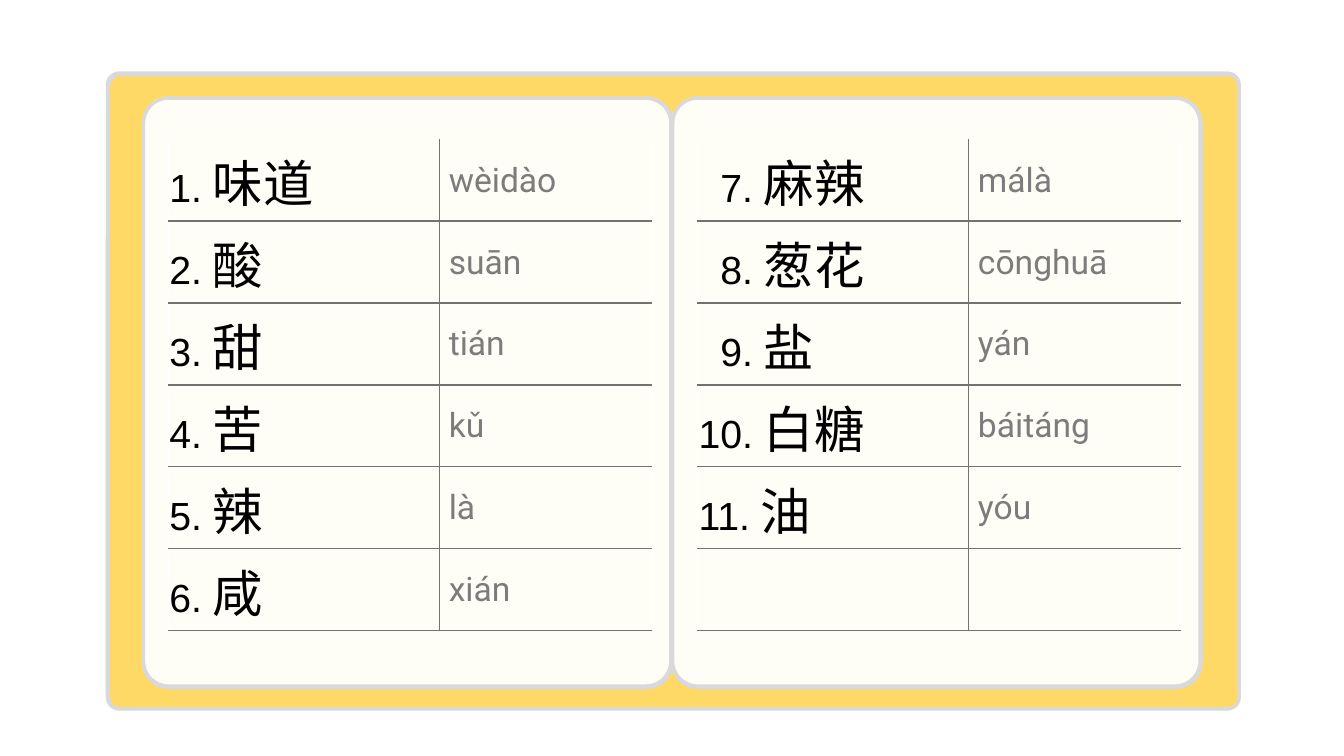
from dataclasses import dataclass
from lxml import etree
from pptx import Presentation
from pptx.dml.color import RGBColor
from pptx.enum import shapes, text
from pptx.oxml import ns
from pptx.util import Pt


@dataclass(frozen=True)
class Theme:
    cover: str = "FFD966"
    page: str = "FFFEF6"
    edge: str = "D9D9D9"
    rule: str = "767171"
    blank: str = "FFFFFF"
    ink: str = "000000"
    pinyin: str = "7C7C7C"
    number_size: float = 28
    word_size: float = 36
    pinyin_size: float = 24
    number_font: str = "Arial"
    word_font: str = "Noto Sans CJK SC"
    pinyin_font: str = "Roboto"


theme = Theme()
ROWS = 6
PAGE_STEP = 378
COLUMN_WIDTHS = (193.68, 151.2)
ROW_HEIGHT = 58.56
CELL_INSET = 0.72
DIGIT_INDENT = 15.56
PINYIN_INDENT = 5.95

pages = [
    [("1", "味道", "wèidào"), ("2", "酸", "suān"), ("3", "甜", "tián"),
     ("4", "苦", "kǔ"), ("5", "辣", "là"), ("6", "咸", "xián")],
    [("7", "麻辣", "málà"), ("8", "葱花", "cōnɡhuā"), ("9", "盐", "yán"),
     ("10", "白糖", "báitánɡ"), ("11", "油", "yóu")],
]


def add_run(paragraph, content, size, font_name, color):
    run = paragraph.add_run()
    run.text = content
    for name, value in {"size": Pt(size), "name": font_name, "bold": False}.items():
        setattr(run.font, name, value)
    run.font.color.rgb = RGBColor.from_string(color)
    east_asian = etree.SubElement(run.font._element, ns.qn("a:ea"))
    east_asian.set("typeface", font_name)


def add_border(cell, side, color):
    line = etree.SubElement(cell._tc.get_or_add_tcPr(), ns.qn(f"a:ln{side}"), w=str(Pt(1)))
    fill = etree.SubElement(line, ns.qn("a:solidFill"))
    etree.SubElement(fill, ns.qn("a:srgbClr"), val=color)


presentation = Presentation()
presentation.slide_width = Pt(960)
presentation.slide_height = Pt(540)
slide = presentation.slides.add_slide(presentation.slide_layouts[6])

panels = [(77.04, 52.56, 807.84, 453.6, 0.018, theme.cover)]
panels += [(102.24 + PAGE_STEP * index, 69.84, 377.28, 420.48, 0.048, theme.page)
           for index in range(len(pages))]
for left, top, width, height, rounding, color in panels:
    shape = slide.shapes.add_shape(
        shapes.MSO_SHAPE.ROUNDED_RECTANGLE, Pt(left), Pt(top), Pt(width), Pt(height))
    shape.adjustments[0] = rounding
    shape.shadow.inherit = False
    shape.fill.solid()
    shape.fill.fore_color.rgb = RGBColor.from_string(color)
    shape.line.color.rgb = RGBColor.from_string(theme.edge)
    shape.line.width = Pt(3)

for index, entries in enumerate(pages):
    table = slide.shapes.add_table(
        ROWS, 2, Pt(120.24 + PAGE_STEP * index), Pt(99.36),
        Pt(sum(COLUMN_WIDTHS)), Pt(ROW_HEIGHT * ROWS)).table
    for name, value in {"first_row": False, "horz_banding": False}.items():
        setattr(table, name, value)
    for column, width in zip(table.columns, COLUMN_WIDTHS):
        column.width = Pt(width)
    for row_index, row in enumerate(table.rows):
        row.height = Pt(ROW_HEIGHT)
        word_cell, pinyin_cell = row.cells
        top_color = theme.rule if row_index else theme.blank
        for cell, left_color, right_color in (
                (word_cell, theme.blank, theme.rule),
                (pinyin_cell, theme.rule, theme.blank)):
            cell_format = {
                "margin_left": Pt(CELL_INSET), "margin_right": Pt(CELL_INSET),
                "margin_top": Pt(CELL_INSET), "margin_bottom": Pt(0),
                "vertical_anchor": text.MSO_ANCHOR.MIDDLE,
            }
            for name, value in cell_format.items():
                setattr(cell, name, value)
            for side, color in zip("LRTB", (left_color, right_color, top_color, theme.rule)):
                add_border(cell, side, color)
            cell.fill.background()
        if row_index >= len(entries):
            continue
        number, word, pinyin = entries[row_index]
        widest = max(len(entry[0]) for entry in entries)
        word_cell.margin_left = Pt(CELL_INSET + DIGIT_INDENT * (widest - len(number)))
        pinyin_cell.margin_left = Pt(CELL_INSET + PINYIN_INDENT)
        paragraph = word_cell.text_frame.paragraphs[0]
        add_run(paragraph, f"{number}. ", theme.number_size, theme.number_font, theme.ink)
        add_run(paragraph, word, theme.word_size, theme.word_font, theme.ink)
        add_run(pinyin_cell.text_frame.paragraphs[0], pinyin,
                theme.pinyin_size, theme.pinyin_font, theme.pinyin)

presentation.save("out.pptx")
